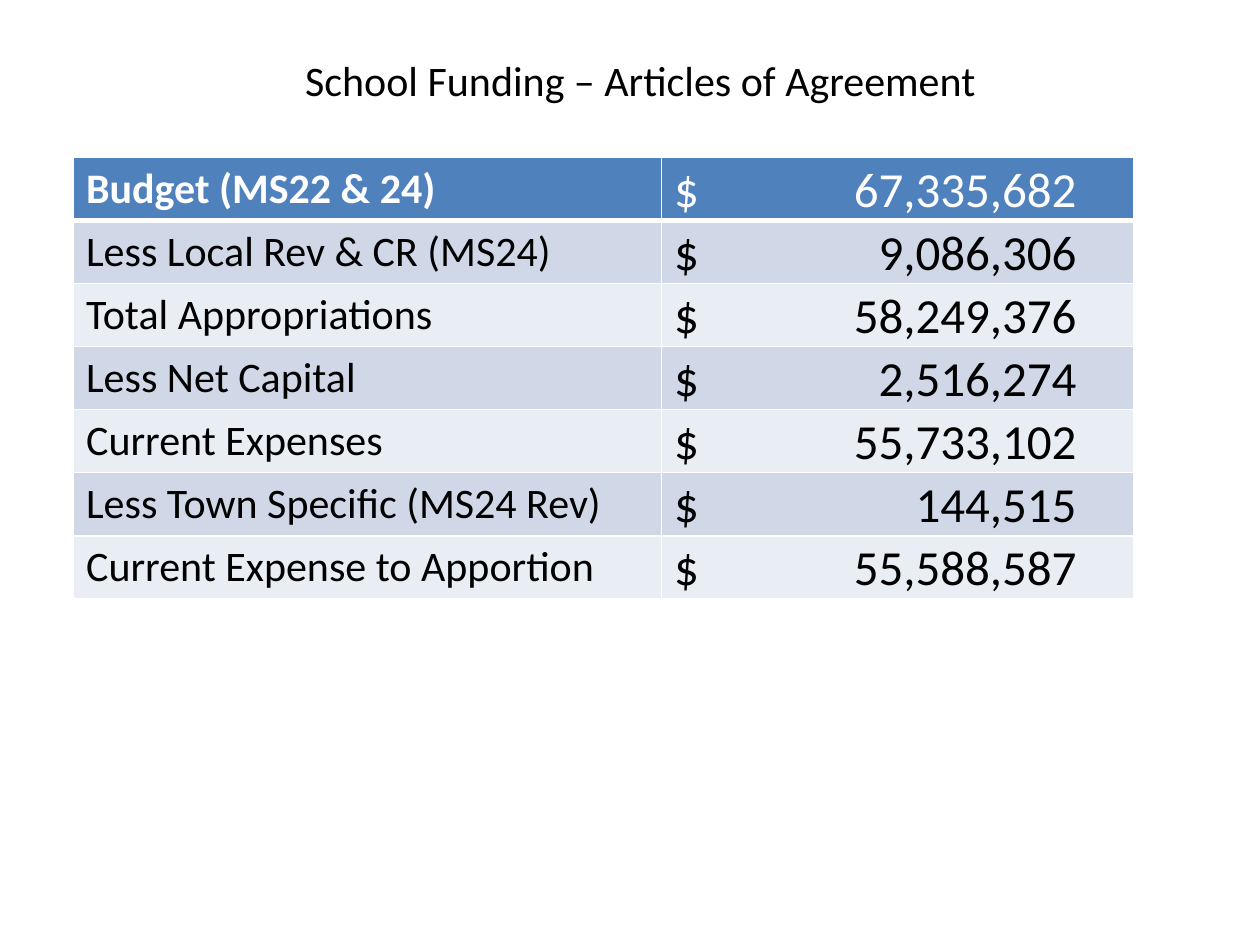
import pptx
import pptx.dml.color
import pptx.enum.text
import pptx.oxml
import pptx.oxml.ns
import pptx.util

Pt = pptx.util.Pt
ANCHOR = pptx.enum.text.MSO_ANCHOR
ALIGN = pptx.enum.text.PP_ALIGN
COLORS = {
    "white": "FFFFFF",
    "black": "000000",
    "head": "4F81BD",
    "odd": "D0D8E8",
    "even": "E9EDF4",
}
ROWS = [
    ("Budget (MS22 & 24)", "67,335,682"),
    ("Less Local Rev & CR (MS24)", "9,086,306"),
    ("Total Appropriations", "58,249,376"),
    ("Less Net Capital", "2,516,274"),
    ("Current Expenses", "55,733,102"),
    ("Less Town Specific (MS24 Rev)", "144,515"),
    ("Current Expense to Apportion", "55,588,587"),
]


class Deck:
    face = "Calibri"

    def __init__(self, wide, high):
        self.show = pptx.Presentation()
        self.show.slide_width = Pt(wide)
        self.show.slide_height = Pt(high)
        self.slide = self.show.slides.add_slide(self.show.slide_layouts[6])

    def color(self, name):
        return pptx.dml.color.RGBColor.from_string(COLORS[name])

    def label(self, para, text, size, color, bold=False):
        para.text = text
        font = para.font
        font.name, font.size, font.bold = self.face, Pt(size), bold
        font.color.rgb = self.color(color)

    def title(self, text, left, top, wide, high):
        frame = self.slide.shapes.add_textbox(
            Pt(left), Pt(top), Pt(wide), Pt(high)).text_frame
        frame.word_wrap = True
        frame.vertical_anchor = ANCHOR.MIDDLE
        para = frame.paragraphs[0]
        para.alignment = ALIGN.CENTER
        self.label(para, text, 24, "black")

    def tab(self, para, place):
        space = pptx.oxml.ns.nsdecls("a")
        para._p.get_or_add_pPr().append(pptx.oxml.parse_xml(
            f'<a:tabLst {space}><a:tab pos="{Pt(place)}" algn="r"/></a:tabLst>'))

    def border(self, cell, base):
        space = pptx.oxml.ns.nsdecls("a")
        props = cell._tc.get_or_add_tcPr()
        for spot, (side, width) in enumerate(
                [("L", 1), ("R", 1), ("T", 1), ("B", base)]):
            props.insert(spot, pptx.oxml.parse_xml(
                f'<a:ln{side} {space} w="{Pt(width)}"><a:solidFill>'
                f'<a:srgbClr val="{COLORS["white"]}"/></a:solidFill></a:ln{side}>'))

    def table(self, rows, left, top, widths, high):
        table = self.slide.shapes.add_table(
            len(rows), len(widths), Pt(left), Pt(top),
            Pt(sum(widths)), Pt(high * len(rows))).table
        table.first_row = table.horz_banding = False
        for col, width in zip(table.columns, widths):
            col.width = Pt(width)
        for index, (item, amount) in enumerate(rows):
            head = index == 0
            table.rows[index].height = Pt(high)
            ink = "white" if head else "black"
            fill = "head" if head else "odd" if index % 2 else "even"
            name, value = table.cell(index, 0), table.cell(index, 1)
            for cell in (name, value):
                cell.fill.solid()
                cell.fill.fore_color.rgb = self.color(fill)
                self.border(cell, 3 if head else 1)
            self.label(name.text_frame.paragraphs[0], item, 24, ink, head)
            value.vertical_anchor = ANCHOR.BOTTOM
            value.margin_left = Pt(7.2)
            value.margin_right = value.margin_top = Pt(0.72)
            value.margin_bottom = 0
            para = value.text_frame.paragraphs[0]
            self.tab(para, 230)
            self.label(para, f"$\t{amount}", 28, ink)


def main():
    deck = Deck(720, 540)
    deck.title("School Funding – Articles of Agreement", 60, 18, 612, 55.5)
    deck.table(ROWS, 42, 90, (336, 270), 36)
    deck.show.save("out.pptx")


if __name__ == "__main__":
    main()
